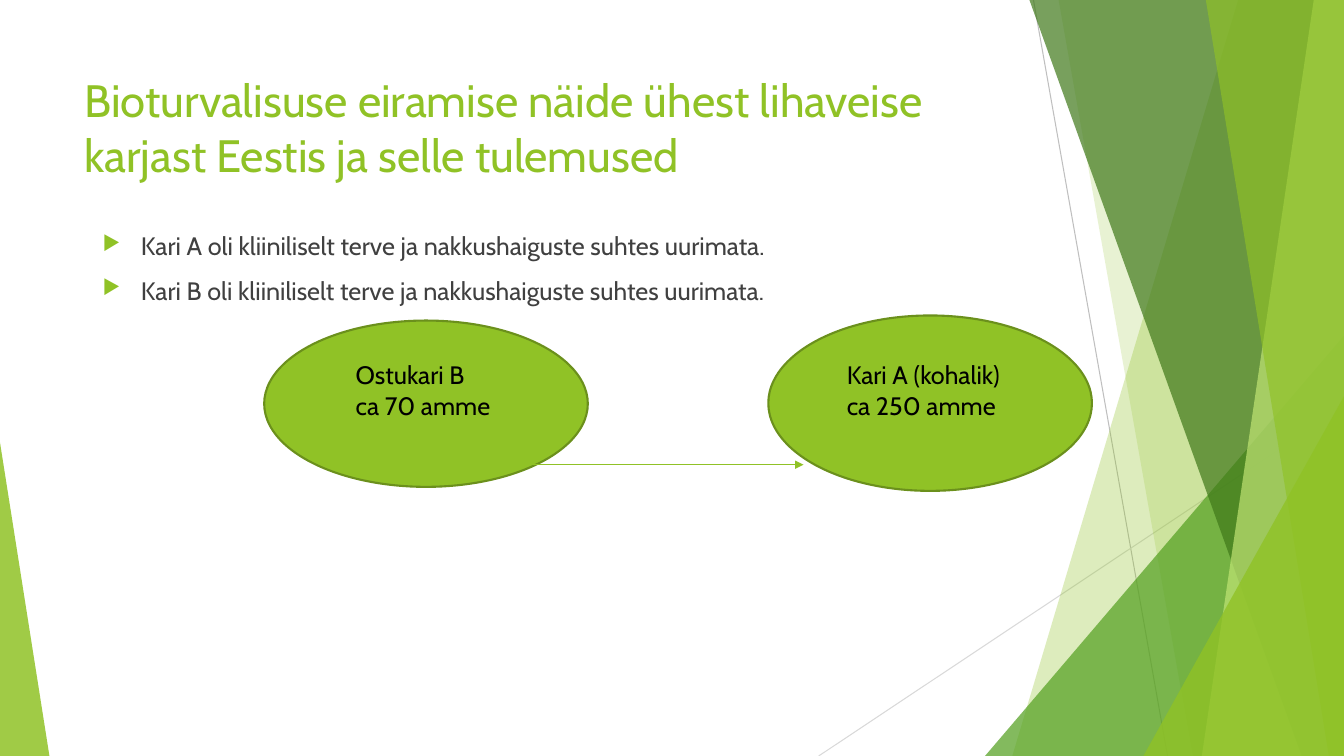
from lxml import etree
from pptx import Presentation
from pptx import util as u
from pptx.dml.color import RGBColor
from pptx.enum import shapes as sh
from pptx.oxml import ns

COL = {"lime": "90C226", "leaf": "54A021", "moss": "3F7819", "pale": "C0E474",
       "edge": "6B901C", "body": "404040", "black": "000000",
       "gray": "BFBFBF", "mist": "D9D9D9"}
FONT = "Cabin"
WIDE, HIGH = 13.33, 7.5


def rgb(name):
    return RGBColor.from_string(COL[name])


def add(node, tag, **attrs):
    return etree.SubElement(node, ns.qn(tag), attrs)


def paint(shape, name, alpha=100):
    shape.shadow.inherit = False
    shape.fill.solid()
    shape.fill.fore_color.rgb = rgb(name)
    shape.line.fill.background()
    if alpha < 100:
        clr = shape.fill._xPr.find(".//" + ns.qn("a:srgbClr"))
        add(clr, "a:alpha", val=str(alpha * 1000))


def rule(slide, start, end, name, width, arrow=False):
    ends = [u.Inches(v) for v in (*start, *end)]
    line = slide.shapes.add_connector(sh.MSO_CONNECTOR.STRAIGHT, *ends)
    line.line.color.rgb = rgb(name)
    line.line.width = u.Pt(width)
    if arrow:
        add(line.line._get_or_add_ln(), "a:tailEnd", type="triangle")
    add(line._element.spPr, "a:effectLst")


def band(slide, box, top, foot, name, alpha):
    """Fill from a slanted left edge to the right side of the box."""
    x, y, w, h = box
    pts = [(x + top, y), (x + w, y), (x + w, y + h), (x + foot, y + h)]
    pts = [(u.Inches(a), u.Inches(b)) for a, b in pts]
    form = slide.shapes.build_freeform(*pts[0], scale=1.0)
    form.add_line_segments(pts[1:], close=True)
    paint(form.convert_to_shape(), name, alpha)


def wedge(slide, box, peak, name, alpha):
    x, y, w, h = box
    tri = slide.shapes.add_shape(sh.MSO_SHAPE.ISOSCELES_TRIANGLE,
                                 *[u.Inches(v) for v in (x, y, w, h)])
    tri.adjustments[0] = peak
    paint(tri, name, alpha)


def decor(slide, box):
    """Overlapping green facets down the right side."""
    x, y, w, h = box
    right, base = x + w, y + h
    rule(slide, (x + 0.48, y), (x + 1.81, base), "gray", 0.75)
    rule(slide, (right, y + 4.03), (x - 1.65, base), "mist", 0.75)

    def corner(wide, tall, name, alpha):
        wedge(slide, (right - wide, base - tall, wide, tall), 1, name, alpha)

    band(slide, box, 2.51, 0.27, "lime", 30)
    band(slide, box, 0.73, 2.06, "lime", 20)
    corner(3.56, 4.17, "leaf", 72)
    band(slide, box, 0.44, 3.14, "moss", 70)
    band(slide, box, 3.26, 2.15, "pale", 70)
    band(slide, box, 2.19, 3.41, "lime", 65)
    corner(1.99, 3.57, "lime", 80)


def write(slide, box, lines, size, name, bullet=False):
    frame = slide.shapes.add_textbox(*[u.Inches(v) for v in box]).text_frame
    frame.word_wrap = True
    for i, line in enumerate(lines):
        para = frame.paragraphs[0] if i == 0 else frame.add_paragraph()
        para.text = line
        if bullet:
            para.space_before = u.Pt(10)
            prop = para._p.get_or_add_pPr()
            prop.set("marL", str(u.Inches(0.38)))
            prop.set("indent", str(u.Inches(-0.38)))
            add(add(prop, "a:buClr"), "a:srgbClr", val=COL["lime"])
            add(prop, "a:buSzPct", val="80000")
            add(prop, "a:buChar", char="▶")
        para.font.name = FONT
        para.font.size = u.Pt(size)
        para.font.color.rgb = rgb(name)


def herd(slide, box, label, lines):
    """Oval with a label placed at an offset (x, y, width) inside it."""
    x, y, w, h = box
    oval = slide.shapes.add_shape(sh.MSO_SHAPE.OVAL,
                                  *[u.Inches(v) for v in box])
    paint(oval, "lime")
    oval.line.color.rgb = rgb("edge")
    oval.line.width = u.Pt(1.5)
    dx, dy, wide = label
    write(slide, (x + dx, y + dy, wide, 0.71), lines, 18, "black")


def flow(slide, box):
    """Purchased herd, local herd and the arrow between them."""
    x, y, w, h = box
    herd(slide, (x + w - 3.21, y, 3.21, h), (0.68, 0.39, 3.21),
         ["Kari A (kohalik)", "ca 250 amme"])
    herd(slide, (x, y + 0.05, 3.21, 1.65), (0.81, 0.34, 1.94),
         ["Ostukari B", "ca 70 amme"])
    rule(slide, (x + 1.71, y + 1.48), (x + 5.35, y + 1.48), "lime", 1, True)


def main():
    deck = Presentation()
    deck.slide_width, deck.slide_height = u.Inches(WIDE), u.Inches(HIGH)
    slide = deck.slides.add_slide(deck.slide_layouts[6])

    # Background
    decor(slide, (9.77, 0, WIDE - 9.77, HIGH))
    wedge(slide, (0, 4.39, 0.49, HIGH - 4.39), 0, "lime", 85)

    # Title and bullets
    write(slide, (0.74, 0.67, 9.4, 1.44),
          ["Bioturvalisuse eiramise näide ühest lihaveise karjast Eestis "
           "ja selle tulemused"], 32.4, "lime")
    write(slide, (0.92, 2.24, 11.5, 4.24),
          [f"Kari {k} oli kliiniliselt terve ja nakkushaiguste suhtes uurimata."
           for k in "AB"], 18, "body", bullet=True)

    # Herds
    flow(slide, (2.62, 3.13, 8.21, 1.74))
    deck.save("out.pptx")


if __name__ == "__main__":
    main()
